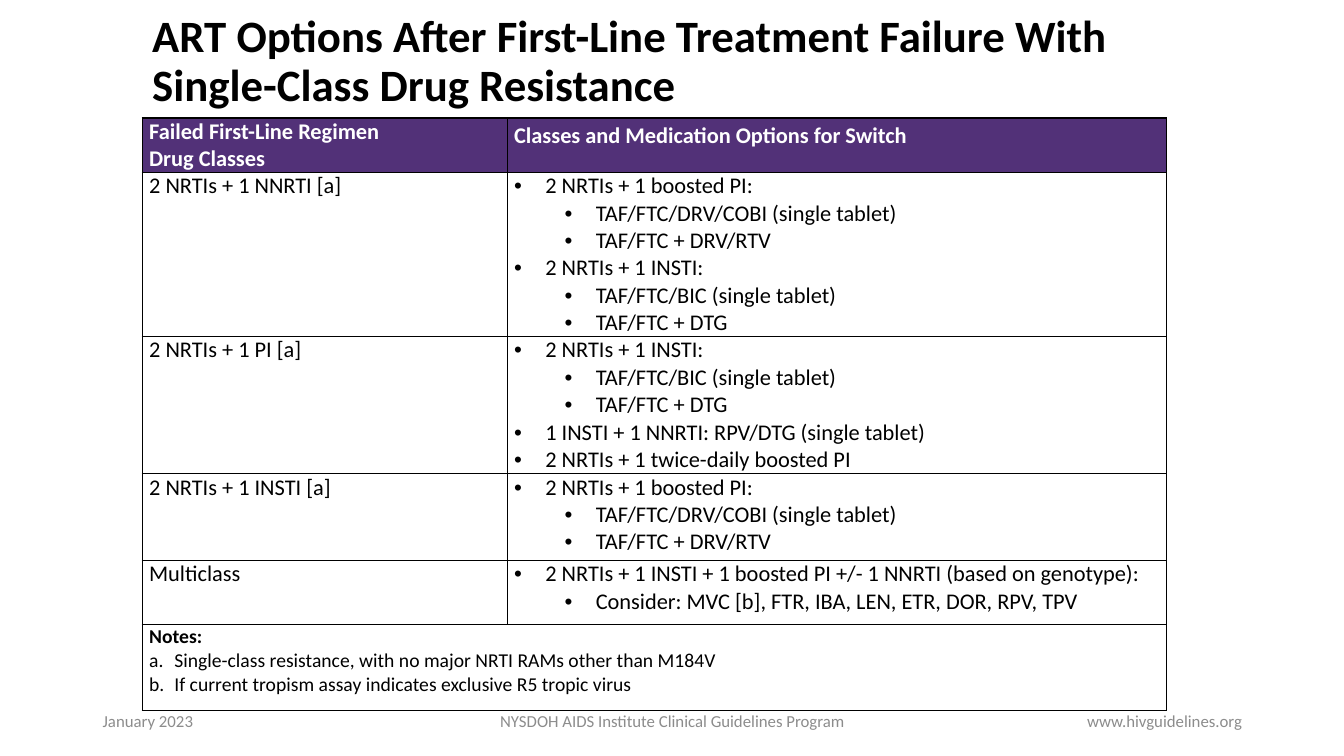
"""Build the slide on ART options after first-line treatment failure."""
from lxml.etree import SubElement
from pptx import Presentation
from pptx.dml.color import RGBColor
from pptx.enum.text import MSO_ANCHOR, MSO_AUTO_SIZE, PP_ALIGN
from pptx.oxml import parse_xml
from pptx.oxml.ns import nsdecls, qn
from pptx.util import Inches, Pt

COLORS = {"ink": "000000", "header": "523178", "white": "FFFFFF", "footer": "8C8C8C"}
FONT = "Calibri"

TITLE = "ART Options After First-Line Treatment Failure With \vSingle-Class Drug Resistance"
HEADERS = [["Failed First-Line Regimen", "Drug Classes"],
           ["Classes and Medication Options for Switch"]]
BOOSTED = [(0, "2 NRTIs + 1 boosted PI:"),
           (1, "TAF/FTC/DRV/COBI (single tablet)"),
           (1, "TAF/FTC + DRV/RTV")]
INSTI = [(0, "2 NRTIs + 1 INSTI:"),
         (1, "TAF/FTC/BIC (single tablet)"),
         (1, "TAF/FTC + DTG")]
REGIMENS = [
    ("2 NRTIs + 1 NNRTI [a]", BOOSTED + INSTI),
    ("2 NRTIs + 1 PI [a]", INSTI + [
        (0, "1 INSTI + 1 NNRTI: RPV/DTG (single tablet)"),
        (0, "2 NRTIs + 1 twice-daily boosted PI")]),
    ("2 NRTIs + 1 INSTI [a]", BOOSTED),
    ("Multiclass", [
        (0, "2 NRTIs + 1 INSTI + 1 boosted PI +/- 1 NNRTI (based on genotype):"),
        (1, "Consider: MVC [b], FTR, IBA, LEN, ETR, DOR, RPV, TPV")]),
]
NOTES = ["Single-class resistance, with no major NRTI RAMs other than M184V",
         "If current tropism assay indicates exclusive R5 tropic virus"]
FOOTERS = [
    ("January 2023", 0.92, 3, PP_ALIGN.LEFT),
    ("NYSDOH AIDS Institute Clinical Guidelines Program", 4.42, 4.5, PP_ALIGN.CENTER),
    ("www.hivguidelines.org", 9.42, 3, PP_ALIGN.RIGHT),
]

LEFT, TABLE_TOP, FOOTER_TOP, FOOTER_HEIGHT = 1.41, 1.17, 6.95, 0.4
COLUMNS = [3.62, 6.54]
ROWS = [0.54, 1.63, 1.36, 0.86, 0.64, 0.85]
BULLET = ("buChar", {"char": "•"})
LETTER = ("buAutoNum", {"type": "alphaLcPeriod"})


def write(para, text, size, color="ink", bold=False):
    """Add one formatted run to a paragraph."""
    span = para.add_run()
    span.text = text
    for name, value in {"name": FONT, "size": Pt(size), "bold": bold}.items():
        setattr(span.font, name, value)
    span.font.color.rgb = RGBColor.from_string(COLORS[color])


def next_para(frame):
    """Return the empty first paragraph, or a new one."""
    first = frame.paragraphs[0]
    return first if not first.runs else frame.add_paragraph()


def add_marker(para, marker, margin, hang):
    """Give a paragraph a hanging bullet or letter."""
    tag, values = marker
    properties = para._p.get_or_add_pPr()
    properties.set("marL", str(Inches(margin)))
    properties.set("indent", str(-Inches(hang)))
    if tag == "buChar":
        SubElement(properties, qn("a:buFont"), typeface="Arial")
    SubElement(properties, qn(f"a:{tag}"), **values)


def style_cell(cell, fill):
    """Set margins, fill and black borders of a cell."""
    for name, value in {"margin_left": 0.07, "margin_right": 0.07,
                        "margin_top": 0, "margin_bottom": 0}.items():
        setattr(cell, name, Inches(value))
    cell.fill.solid()
    cell.fill.fore_color.rgb = RGBColor.from_string(COLORS[fill])
    properties = cell._tc.get_or_add_tcPr()
    for place, side in enumerate("LRTB"):
        properties.insert(place, parse_xml(
            f'<a:ln{side} {nsdecls("a")} w="{Pt(1)}"><a:solidFill>'
            f'<a:srgbClr val="{COLORS["ink"]}"/></a:solidFill></a:ln{side}>'))


def add_title(page):
    """Place and format the title."""
    title = page.shapes.title
    for name, value in {"left": LEFT, "top": 0.16, "width": 10, "height": 0.92}.items():
        setattr(title, name, Inches(value))
    frame = title.text_frame
    for name, value in {"auto_size": MSO_AUTO_SIZE.NONE, "word_wrap": True,
                        "vertical_anchor": MSO_ANCHOR.MIDDLE}.items():
        setattr(frame, name, value)
    para = frame.paragraphs[0]
    para.alignment, para.line_spacing = PP_ALIGN.LEFT, 0.9
    first, second = TITLE.split("\v")
    write(para, first, 32, bold=True)
    para.add_line_break()
    write(para, second, 32, bold=True)


def add_options_table(page):
    """Build the table of regimens, options and notes."""
    table = page.shapes.add_table(
        len(ROWS), len(COLUMNS), Inches(LEFT), Inches(TABLE_TOP),
        Inches(sum(COLUMNS)), Inches(sum(ROWS))).table
    table.horz_banding = False
    for column, width in zip(table.columns, COLUMNS):
        column.width = Inches(width)
    for row, height in zip(table.rows, ROWS):
        row.height = Inches(height)
    for index, row in enumerate(table.rows):
        for cell in row.cells:
            style_cell(cell, "white" if index else "header")

    for column, lines in enumerate(HEADERS):
        for line in lines:
            write(next_para(table.cell(0, column).text_frame), line, 16, "white", True)
    heading = table.cell(0, 1).text_frame.paragraphs[0]
    for name, value in {"line_spacing": 1.15, "space_after": Pt(3)}.items():
        setattr(heading, name, value)

    for index, (regimen, options) in enumerate(REGIMENS, 1):
        write(table.cell(index, 0).text_frame.paragraphs[0], regimen, 16)
        for level, option in options:
            para = next_para(table.cell(index, 1).text_frame)
            para.level = level
            add_marker(para, BULLET, 0.31 + 0.5 * level, 0.31)
            write(para, option, 16)

    notes = table.cell(len(ROWS) - 1, 0)
    notes.merge(table.cell(len(ROWS) - 1, 1))
    write(notes.text_frame.paragraphs[0], "Notes:", 14, bold=True)
    for note in NOTES:
        para = next_para(notes.text_frame)
        add_marker(para, LETTER, 0.25, 0.25)
        write(para, note, 14)


def add_footers(page):
    """Place the three footer texts on one line."""
    for text, left, width, alignment in FOOTERS:
        box = page.shapes.add_textbox(Inches(left), Inches(FOOTER_TOP),
                                      Inches(width), Inches(FOOTER_HEIGHT))
        frame = box.text_frame
        frame.word_wrap, frame.vertical_anchor = True, MSO_ANCHOR.MIDDLE
        frame.paragraphs[0].alignment = alignment
        write(frame.paragraphs[0], text, 12, "footer")


def main():
    """Create and save the deck."""
    deck = Presentation()
    deck.slide_width, deck.slide_height = Inches(13.33), Inches(7.5)
    page = deck.slides.add_slide(deck.slide_layouts[5])
    add_title(page)
    add_footers(page)
    add_options_table(page)
    deck.save("out.pptx")


if __name__ == "__main__":
    main()
